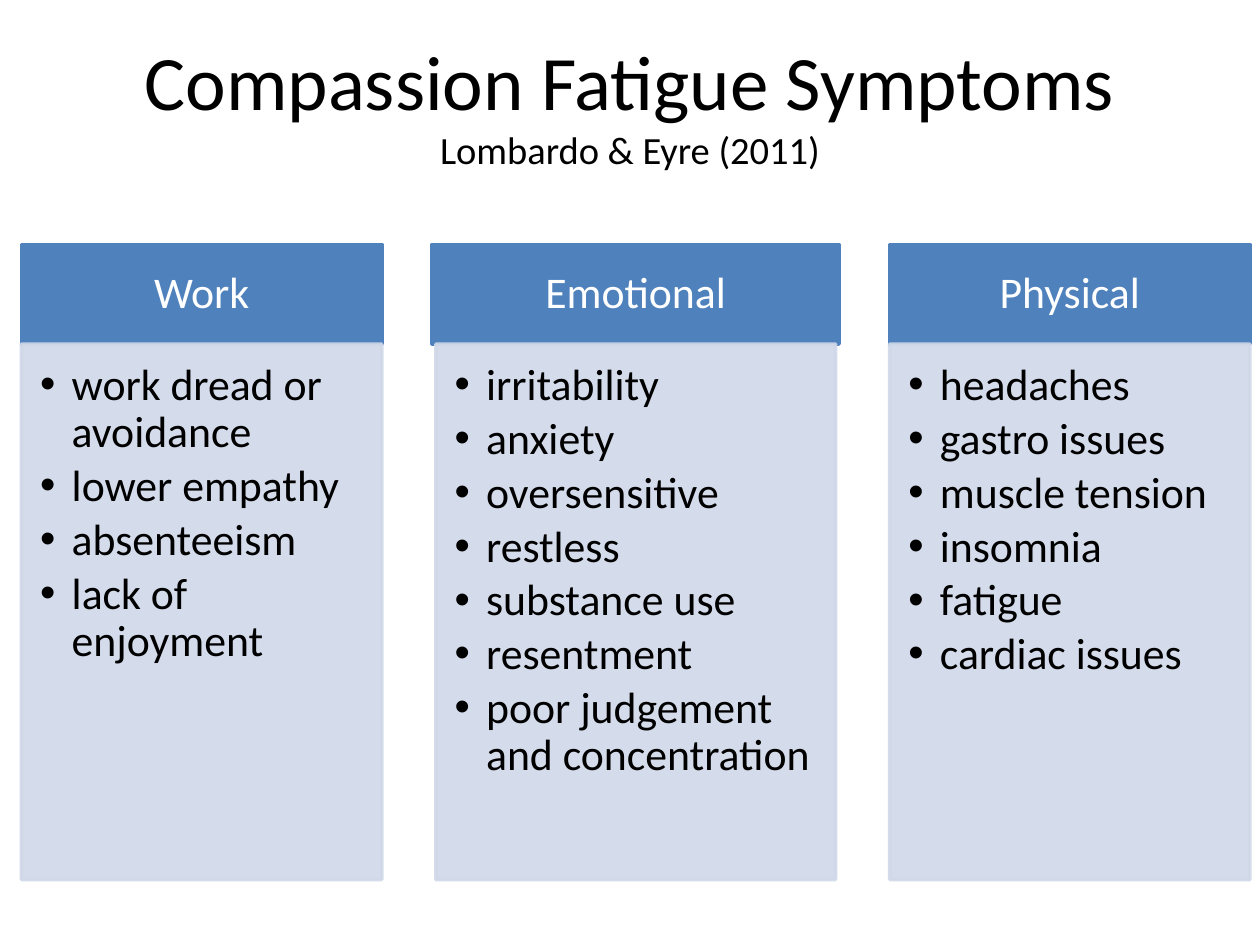
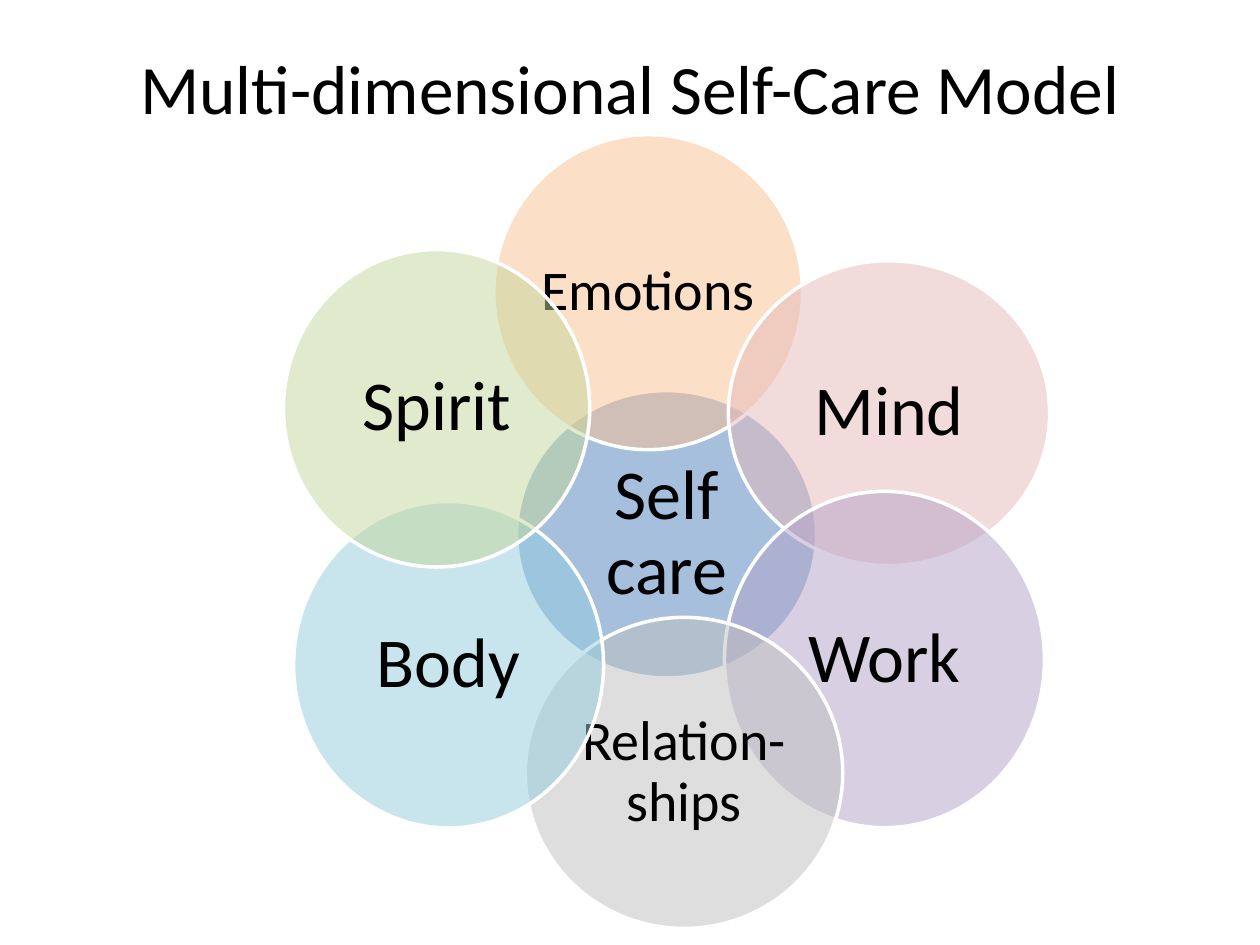
from dataclasses import dataclass

from lxml import etree
from pptx import Presentation
from pptx.dml.color import RGBColor
from pptx.enum import shapes, text
from pptx.oxml import ns
from pptx.util import Pt


@dataclass(frozen=True)
class Theme:
    font: str = "Calibri"
    ink: str = "000000"
    white: str = "FFFFFF"
    header: str = "4F81BD"
    panel: str = "D0D8E8"
    title_size: float = 44
    model_title_size: float = 39.6
    citation_size: float = 22
    list_size: float = 25
    circle_size: float = 40
    small_circle_size: float = 32
    line_width: float = 2
    line_spacing: float = 0.9


theme = Theme()


def add_block(slide, kind, box, fill, line, opacity=100, line_opacity=100):
    """Add a filled, outlined shape without shadow."""
    block = slide.shapes.add_shape(kind, *map(Pt, box))
    block.shadow.inherit = False
    block.fill.solid()
    block.fill.fore_color.rgb = RGBColor.from_string(fill)
    block.line.color.rgb = RGBColor.from_string(line)
    block.line.width = Pt(theme.line_width)
    colours = block._element.spPr.iter(ns.qn("a:srgbClr"))
    for colour, percent in zip(colours, (opacity, line_opacity)):
        if percent < 100:
            etree.SubElement(colour, ns.qn("a:alpha"), val=str(percent * 1000))
    return block


def format_text(frame, size, colour, insets, align=text.PP_ALIGN.CENTER,
                anchor=text.MSO_ANCHOR.MIDDLE, spacing=theme.line_spacing):
    """Format every paragraph and run of a text frame."""
    frame.word_wrap = True
    frame.auto_size = text.MSO_AUTO_SIZE.NONE
    frame.vertical_anchor = anchor
    (frame.margin_left, frame.margin_top,
     frame.margin_right, frame.margin_bottom) = map(Pt, insets)
    for paragraph in frame.paragraphs:
        paragraph.alignment = align
        paragraph.line_spacing = spacing
        for run in paragraph.runs:
            run.font.name = theme.font
            run.font.size = Pt(size)
            run.font.color.rgb = RGBColor.from_string(colour)


prs = Presentation()
prs.slide_width, prs.slide_height = Pt(720), Pt(540)

# Titles of both slides
titles = [
    ("Compassion Fatigue Symptoms\vLombardo & Eyre (2011)",
     theme.title_size, (36, 6, 648, 106)),
    ("Multi-dimensional Self-Care Model",
     theme.model_title_size, (36, 21.6, 648, 56)),
]
for wording, size, box in titles:
    slide = prs.slides.add_slide(prs.slide_layouts[5])
    title = slide.shapes.title
    title.left, title.top, title.width, title.height = map(Pt, box)
    title.text_frame.text = wording
    format_text(title.text_frame, size, theme.ink, (7.2, 3.6, 7.2, 3.6), spacing=1.0)
symptoms, model = prs.slides
citation = symptoms.shapes.title.text_frame.paragraphs[0].runs[1]
citation.font.size = Pt(theme.citation_size)

# Symptom columns: heading, heading width, panel width, items
columns = [
    ("Work", 206, 206,
     ["work dread or avoidance", "lower empathy", "absenteeism", "lack of enjoyment"]),
    ("Emotional", 232.5, 228.5,
     ["irritability", "anxiety", "oversensitive", "restless", "substance use",
      "resentment", "poor judgement and concentration"]),
    ("Physical", 206, 206,
     ["headaches", "gastro issues", "muscle tension", "insomnia", "fatigue",
      "cardiac issues"]),
]
left, column_gap = 12.2, 28.8
header_top, header_height, panel_height = 139.7, 56.9, 306
rectangle = shapes.MSO_SHAPE.RECTANGLE
for heading, width, panel_width, items in columns:
    header = add_block(symptoms, rectangle, (left, header_top, width, header_height),
                       theme.header, theme.header)
    header.text_frame.text = heading
    format_text(header.text_frame, theme.list_size, theme.white, (13.7, 8, 13.7, 8))

    panel_left = left + (width - panel_width) / 2
    panel = add_block(symptoms, rectangle,
                      (panel_left, header_top + header_height, panel_width, panel_height),
                      theme.panel, theme.panel, 90, 90)
    panel.text_frame.text = "\n".join(items)
    for item in panel.text_frame.paragraphs:
        properties = item._p.get_or_add_pPr()
        properties.set("marL", str(Pt(18)))
        properties.set("indent", str(-Pt(18)))
        etree.SubElement(properties, ns.qn("a:buFont"), typeface="Arial")
        etree.SubElement(properties, ns.qn("a:buChar"), char="•")
        item.space_after = Pt(0.15 * theme.list_size)
    format_text(panel.text_frame, theme.list_size, theme.ink, (10.8, 10.8, 13.7, 15.8),
                text.PP_ALIGN.LEFT, text.MSO_ANCHOR.TOP)
    left += width + column_gap

# Self-care circles, back to front: label, colour, size, inset, box
large, small = theme.circle_size, theme.small_circle_size
circles = [
    ("Self care", "4F81BD", large, 4, (295.2, 223.2, 171.4, 164.2)),
    ("Emotions", "FAC090", small, 0, (282.2, 77, 176.4, 180)),
    ("Mind", "E6B9B8", large, 4, (416.2, 149, 183.6, 174.2)),
    ("Work", "B3A2C7", large, 4, (414, 280.8, 182.9, 192.2)),
    ("Relation-ships", "BFBFBF", small, 3, (300.2, 352.8, 181.4, 177.8)),
    ("Body", "93CDDD", large, 4, (167.8, 286.6, 177.1, 186.5)),
    ("Spirit", "C3D69B", large, 4, (162, 142.6, 175, 181.4)),
]
for label, colour, size, inset, box in circles:
    circle = add_block(model, shapes.MSO_SHAPE.OVAL, box, colour, theme.white, 50)
    circle.text_frame.text = label
    format_text(circle.text_frame, size, theme.ink, [inset] * 4)

prs.save("out.pptx")
